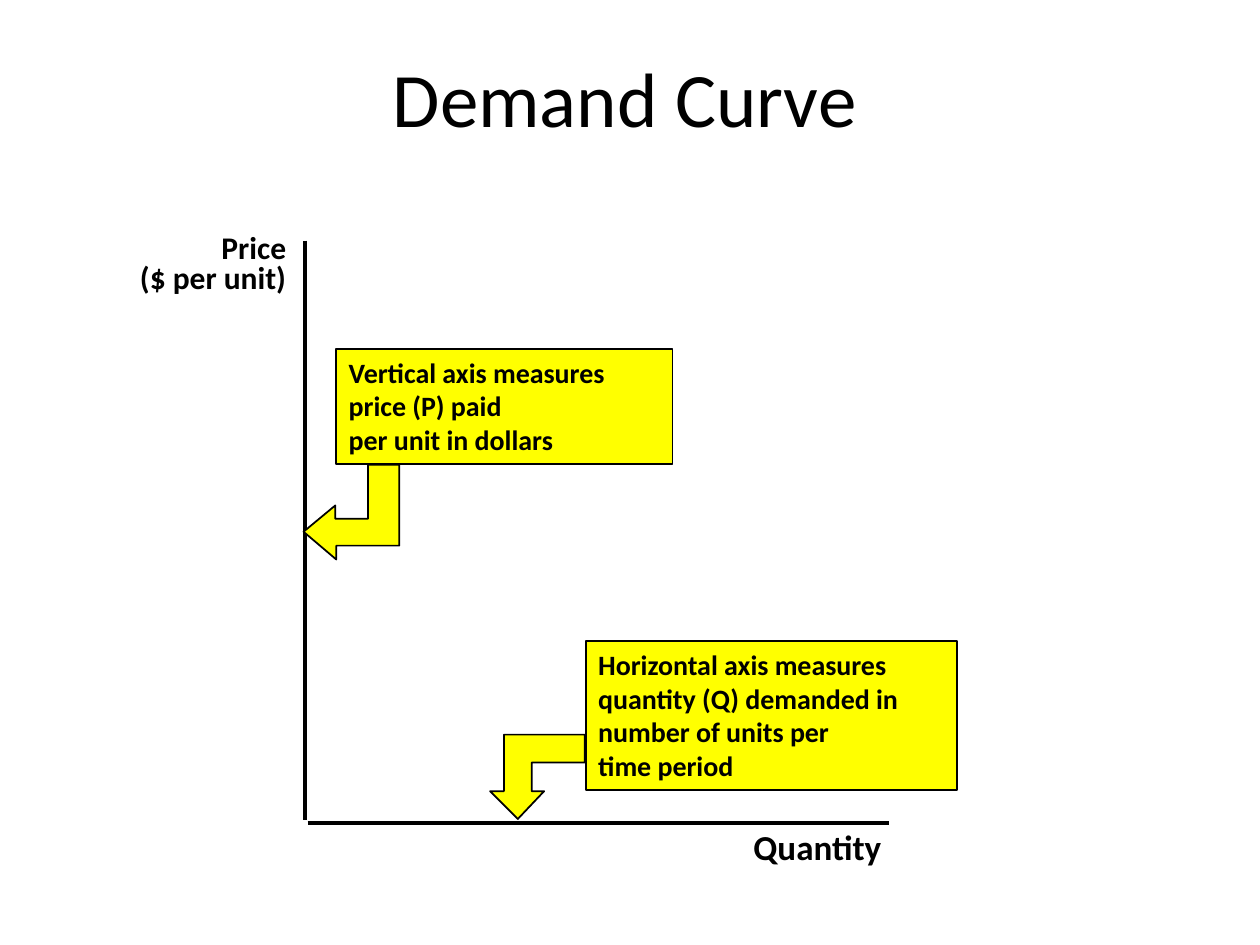
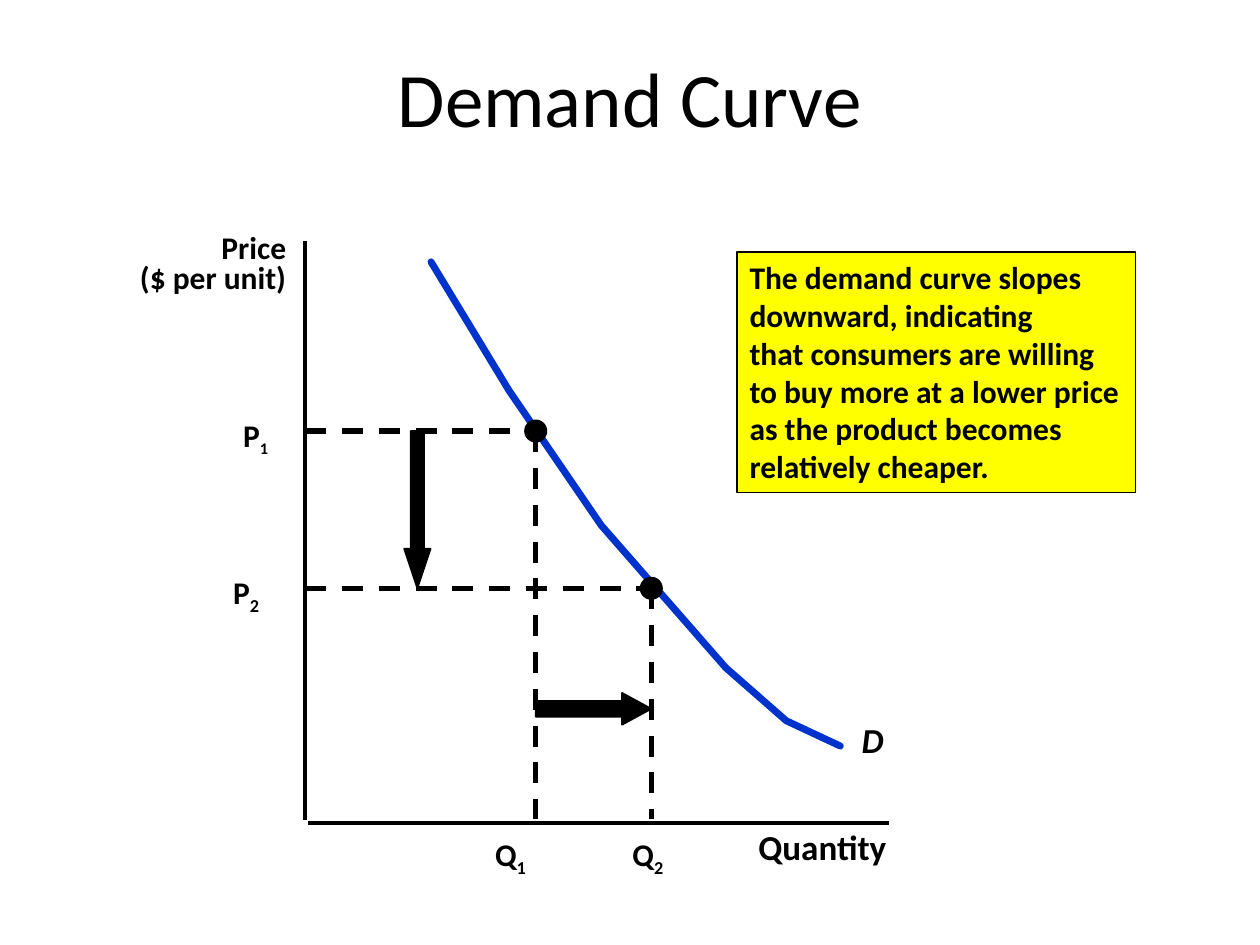
from lxml import etree
from pptx import Presentation
from pptx.dml.color import RGBColor
from pptx.enum.dml import MSO_LINE
from pptx.enum.shapes import MSO_CONNECTOR, MSO_SHAPE
from pptx.enum.text import MSO_ANCHOR, PP_ALIGN
from pptx.oxml.ns import qn
from pptx.util import Cm, Pt

LEFT, CENTER, RIGHT = PP_ALIGN.LEFT, PP_ALIGN.CENTER, PP_ALIGN.RIGHT
TOP, MIDDLE = MSO_ANCHOR.TOP, MSO_ANCHOR.MIDDLE
RECTANGLE, OVAL = MSO_SHAPE.RECTANGLE, MSO_SHAPE.OVAL
DOWN_ARROW, RIGHT_ARROW = MSO_SHAPE.DOWN_ARROW, MSO_SHAPE.RIGHT_ARROW
STRAIGHT, DASH = MSO_CONNECTOR.STRAIGHT, MSO_LINE.DASH

FONT = "Calibri"
BLACK, YELLOW, BLUE = "000000", "FFFF00", "0033CC"

# Shared content; all lengths are centimetres
TITLE = "Demand Curve"
PRICE_LABEL = ["Price", "($ per unit)"]
PRICE_AXIS_X, QUANTITY_AXIS_Y = 6.15, 16.59
AXES = [
    ((PRICE_AXIS_X, 4.85), (PRICE_AXIS_X, 16.54)),
    ((6.2, QUANTITY_AXIS_Y), (17.93, QUANTITY_AXIS_Y)),
]

# Slide 1: callouts, each with an arrow outline
AXIS_CALLOUTS = [
    {
        "box": (11.81, 12.93, 7.49, 3.0),
        "lines": ["Horizontal axis measures", "quantity (Q) demanded in",
                  "number of units per", "time period"],
        "arrow": [(10.44, 16.51), (10.97, 15.95), (10.72, 15.95),
                  (10.72, 15.37), (11.79, 15.37), (11.79, 14.81),
                  (10.16, 14.81), (10.16, 15.95), (9.88, 15.95)],
    },
    {
        "box": (6.78, 7.04, 6.78, 2.31),
        "lines": ["Vertical axis measures", "price (P) paid",
                  "per unit in dollars"],
        "arrow": [(6.12, 10.72), (6.76, 10.19), (6.76, 10.46),
                  (7.42, 10.46), (7.42, 9.37), (8.05, 9.37),
                  (8.05, 11.0), (6.78, 11.0), (6.78, 11.28)],
    },
]

# Slide 2: the curve, two points on it and its explanation
DEMAND_CURVE = [(8.69, 5.28), (10.26, 7.87), (12.12, 10.59),
                (14.63, 13.46), (15.85, 14.53), (16.94, 15.04)]
CURVE_POINTS = [(10.8, 8.69), (13.13, 11.86)]
POINT_LABELS = [  # letter, subscript, subscript size, left, top
    ("P", "1", 16, 4.65, 8.26),
    ("P", "2", 18, 4.45, 11.43),
    ("Q", "1", 18, 9.73, 16.71),
    ("Q", "2", 18, 12.5, 16.71),
]
CURVE_BOX = (14.86, 5.08, 8.03, 4.85)
CURVE_LINES = ["The demand curve slopes", "downward, indicating",
               "that consumers are willing", "to buy more at a lower price",
               "as the product becomes", "relatively cheaper."]
DOT_SIZE = 0.43


def color(hex_string):
    return RGBColor.from_string(hex_string)


def style_shape(shape, fill, line=BLACK, width=1):
    shape.shadow.inherit = False
    if fill:
        shape.fill.solid()
        shape.fill.fore_color.rgb = color(fill)
    else:
        shape.fill.background()
    shape.line.color.rgb = color(line)
    shape.line.width = Pt(width)


def add_run(paragraph, text, size, bold=True, italic=False):
    run = paragraph.add_run()
    run.text = text
    font = run.font
    font.name, font.size, font.bold, font.italic = FONT, Pt(size), bold, italic
    font.color.rgb = color(BLACK)
    return run


def write_lines(shape, lines, size, align=LEFT, anchor=TOP, spacing=None, **style):
    frame = shape.text_frame
    frame.word_wrap = True
    frame.vertical_anchor = anchor
    for index, line in enumerate(lines):
        paragraph = frame.add_paragraph() if index else frame.paragraphs[0]
        paragraph.alignment = align
        paragraph.line_spacing = spacing
        add_run(paragraph, line, size, **style)


def add_text(slide, box, lines, size, **style):
    textbox = slide.shapes.add_textbox(*map(Cm, box))
    write_lines(textbox, lines, size, **style)
    return textbox


def add_preset(slide, preset, box, fill=BLACK):
    shape = slide.shapes.add_shape(preset, *map(Cm, box))
    style_shape(shape, fill)
    return shape


def add_callout(slide, box, lines, size):
    write_lines(add_preset(slide, RECTANGLE, box, YELLOW), lines, size)


def add_line(slide, start, end, width, dash=None):
    connector = slide.shapes.add_connector(STRAIGHT, *map(Cm, start + end))
    connector.line.color.rgb = color(BLACK)
    connector.line.width = Pt(width)
    if dash:
        connector.line.dash_style = dash
    etree.SubElement(connector.element.spPr, qn("a:effectLst"))


def add_outline(slide, points, close):
    corners = [(Cm(x), Cm(y)) for x, y in points]
    builder = slide.shapes.build_freeform(*corners[0])
    builder.add_line_segments(corners[1:], close=close)
    return builder.convert_to_shape()


def add_diagram_slide(presentation, title_box, quantity_left):
    """Blank slide with the title, both axes and their labels."""
    slide = presentation.slides.add_slide(presentation.slide_layouts[6])
    add_text(slide, title_box, [TITLE], 44, align=CENTER, anchor=MIDDLE, bold=False)
    for start, end in AXES:
        add_line(slide, start, end, 2)
    add_text(slide, (2.21, 4.62, 3.81, 1.68), PRICE_LABEL, 18, align=RIGHT, spacing=0.8)
    add_text(slide, (quantity_left, 16.51, 3.5, 1.09), ["Quantity"], 20)
    return slide


def build_axes_slide(presentation):
    slide = add_diagram_slide(presentation, (1.07, 0.64, 23.06, 2.62), 14.94)
    for callout in AXIS_CALLOUTS:
        add_callout(slide, callout["box"], callout["lines"], 16)
        style_shape(add_outline(slide, callout["arrow"], True), YELLOW)


def build_curve_slide(presentation):
    slide = add_diagram_slide(presentation, (1.27, 0.64, 22.86, 2.62), 15.04)

    # Demand curve and explanation
    curve = add_outline(slide, DEMAND_CURVE, False)
    style_shape(curve, None, BLUE, 4)
    curve.element.spPr.find(qn("a:ln")).set("cap", "rnd")
    add_text(slide, (17.12, 14.35, 1.02, 1.09), ["D"], 20, italic=True)
    add_callout(slide, CURVE_BOX, CURVE_LINES, 18)

    # Dashed guides from each point to both axes
    for x, y in CURVE_POINTS:
        add_line(slide, (PRICE_AXIS_X, y), (x, y), 3, DASH)
        add_line(slide, (x, y), (x, 16.51), 3, DASH)

    # Labels with subscripts
    for letter, subscript, size, left, top in POINT_LABELS:
        label = add_text(slide, (left, top, 1.47, 1.02), [letter], 18)
        run = add_run(label.text_frame.paragraphs[0], subscript, size)
        run.font.element.set("baseline", "-25000") if hasattr(
            run.font, "element") else run._r.get_or_add_rPr().set("baseline", "-25000")

    # Arrows for the fall in price and the rise in quantity
    (x1, y1), (x2, y2) = CURVE_POINTS
    arrows = [
        (DOWN_ARROW, (8.15, y1, 0.53, y2 - y1), 1.5),
        (RIGHT_ARROW, (x1, 13.97, x2 - x1, 0.64), 0.92),
    ]
    for preset, box, head_length in arrows:
        arrow = add_preset(slide, preset, box)
        arrow.adjustments[0] = 0.5
        arrow.adjustments[1] = head_length

    # Points on the curve
    for x, y in CURVE_POINTS:
        add_preset(slide, OVAL, (x - DOT_SIZE / 2, y - DOT_SIZE / 2, DOT_SIZE, DOT_SIZE))


def main():
    presentation = Presentation()
    presentation.slide_width, presentation.slide_height = Cm(25.4), Cm(19.05)
    build_axes_slide(presentation)
    build_curve_slide(presentation)
    presentation.save("out.pptx")


if __name__ == "__main__":
    main()
